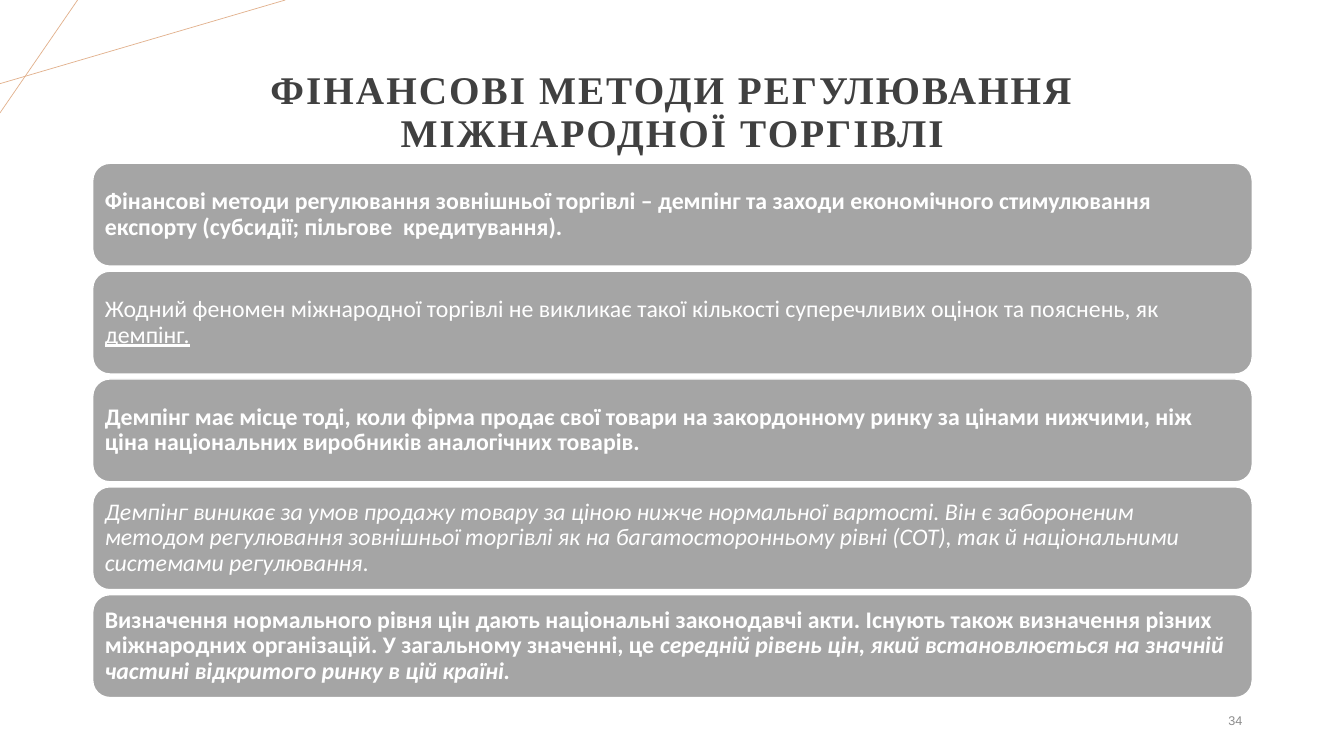
from lxml.etree import SubElement
from pptx import Presentation
from pptx.dml.color import RGBColor
from pptx.enum.shapes import MSO_CONNECTOR as CONN, MSO_SHAPE as SHAPE
from pptx.enum.text import MSO_ANCHOR as ANCHOR, MSO_AUTO_SIZE as AUTO, PP_ALIGN as ALIGN
from pptx.oxml.ns import qn
from pptx.util import Pt

PX = 9144
COLORS = {"ray": "E2B18D", "title": "404040", "number": "8C8C8C",
          "card": "A5A5A5", "white": "FFFFFF"}
CARD_TOP, CARD_HEIGHT, CARD_STEP = 162, 102, 107
LEFT, WIDTH = 92, 1150

CARDS = [
    [("Фінансові методи регулювання зовнішньої торгівлі – демпінг та заходи економічного "
      "стимулювання експорту (субсидії; пільгове  кредитування).", "b")],
    [("Жодний феномен міжнародної торгівлі не викликає такої кількості суперечливих оцінок "
      "та пояснень, як ", ""),
     ("демпінг.", "u")],
    [("Демпінг має місце тоді, коли фірма продає свої товари на закордонному ринку за цінами "
      "нижчими, ніж ціна національних виробників аналогічних товарів.", "b")],
    [("Демпінг виникає за умов продажу товару за ціною нижче нормальної вартості. Він є "
      "забороненим методом регулювання зовнішньої торгівлі як на багатосторонньому рівні "
      "(СОТ), так й національними системами регулювання", "i"),
     (".", "")],
    [("Визначення нормального рівня цін дають національні законодавчі акти. Існують також "
      "визначення різних міжнародних організацій. У загальному значенні, це ", "b"),
     ("середній рівень цін, який встановлюється на значній частині відкритого ринку в цій "
      "країні.", "bi")],
]


class Deck:
    def __init__(self, width, height):
        self.prs = Presentation()
        self.prs.slide_width, self.prs.slide_height = width * PX, height * PX
        self.s = self.prs.slides.add_slide(self.prs.slide_layouts[5])

    def color(self, name):
        return RGBColor.from_string(COLORS[name])

    def font(self, r, name, size, color, style=""):
        f = r.font
        f.name, f.size = name, Pt(size)
        f.color.rgb = self.color(color)
        f.bold, f.italic, f.underline = "b" in style, "i" in style, "u" in style

    def frame(self, sp, align, spacing=1.0):
        tf = sp.text_frame
        tf.word_wrap, tf.auto_size = True, AUTO.NONE
        tf.vertical_anchor = ANCHOR.MIDDLE
        p = tf.paragraphs[0]
        p.alignment, p.line_spacing = align, spacing
        return p

    def ray(self, x1, y1, x2, y2):
        line = self.s.shapes.add_connector(CONN.STRAIGHT, x1 * PX, y1 * PX, x2 * PX, y2 * PX)
        line.line.color.rgb = self.color("ray")
        line.line.width = Pt(0.5)
        SubElement(line._element.spPr, qn("a:effectLst"))

    def title(self, text, x, y, w, h):
        sp = self.s.shapes.title
        sp.left, sp.top, sp.width, sp.height = x * PX, y * PX, w * PX, h * PX
        p = self.frame(sp, ALIGN.CENTER, 0.9)
        p.text = text
        r = p.runs[0]
        self.font(r, "Times New Roman", 28, "title", "b")
        r.font._element.set("spc", "150")

    def number(self, text, x, y, w, h):
        sp = self.s.shapes.add_textbox(x * PX, y * PX, w * PX, h * PX)
        p = self.frame(sp, ALIGN.RIGHT)
        p.text = text
        self.font(p.runs[0], "Arial", 9, "number")

    def card(self, parts, x, y, w, h):
        sp = self.s.shapes.add_shape(SHAPE.ROUNDED_RECTANGLE, x * PX, y * PX, w * PX, h * PX)
        sp.shadow.inherit = False
        sp.fill.solid()
        sp.fill.fore_color.rgb = self.color("card")
        sp.line.color.rgb = self.color("white")
        sp.line.width = Pt(1)
        tf = sp.text_frame
        tf.margin_left = tf.margin_right = tf.margin_top = tf.margin_bottom = 7 * PX
        p = self.frame(sp, ALIGN.LEFT, 0.9)
        for text, style in parts:
            r = p.add_run()
            r.text = text
            self.font(r, "Calibri", 17, "white", style)


def main():
    deck = Deck(1333, 750)
    deck.ray(0, 83, 283, 0)
    deck.ray(77, 0, 0, 112)
    deck.title("ФІНАНСОВІ МЕТОДИ РЕГУЛЮВАННЯ МІЖНАРОДНОЇ ТОРГІВЛІ", LEFT, 40, WIDTH, 145)
    deck.number("34", 942, 695, 300, 40)
    for i, parts in enumerate(CARDS):
        deck.card(parts, LEFT, CARD_TOP + i * CARD_STEP, WIDTH, CARD_HEIGHT)
    deck.prs.save("out.pptx")


if __name__ == "__main__":
    main()
